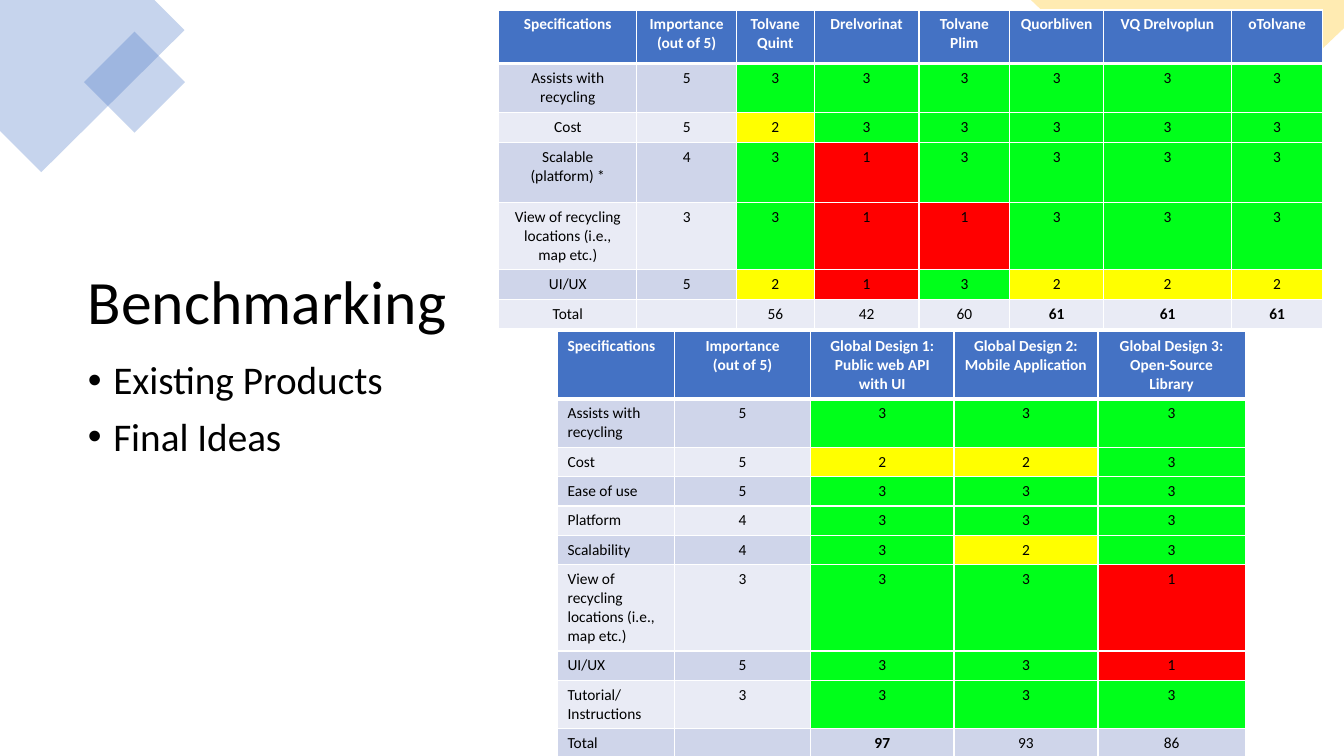
"""Build the benchmarking slide with its two scoring tables."""
from lxml import etree
from pptx import Presentation
from pptx.dml.color import RGBColor
from pptx.enum import shapes, text
from pptx.oxml import ns
from pptx.util import Cm, Pt

COLORS = {
    "blue": "4472C4", "gold": "FFC000", "white": "FFFFFF", "black": "000000",
    "dark band": "CFD5EA", "light band": "E9EBF5",
    "3": "00FF1A", "2": "FFFF00", "1": "FF0000",
}


def add_scores(left, top, widths, heights, rows, label_align):
    """Add a table whose scores are coloured and whose best totals are bold."""
    scores = slide.shapes.add_table(
        len(rows), len(widths), Cm(left), Cm(top), Cm(sum(widths)), Cm(sum(heights))).table
    for column, width in zip(scores.columns, widths):
        column.width = Cm(width)
    for row, height in zip(scores.rows, heights):
        row.height = Cm(height)
    best_total = max(rows[-1][2:], key=int)
    for r, values in enumerate(rows):
        is_header, is_total = r == 0, r == len(rows) - 1
        for c, value in enumerate(values):
            cell = scores.cell(r, c)
            cell.text_frame.text = value
            properties = cell._tc.get_or_add_tcPr()
            for side in ("lnL", "lnR", "lnT", "lnB"):
                thick = (is_header and side == "lnB") or (r == 1 and side == "lnT")
                border = etree.SubElement(properties, ns.qn(f"a:{side}"), w=str(Pt(3 if thick else 1)))
                line_fill = etree.SubElement(border, ns.qn("a:solidFill"))
                etree.SubElement(line_fill, ns.qn("a:srgbClr"), val=COLORS["white"])
            if is_header:
                shade = "blue"
            elif c >= 2 and not is_total:
                shade = value
            else:
                shade = "dark band" if r % 2 else "light band"
            cell.fill.solid()
            cell.fill.fore_color.rgb = RGBColor.from_string(COLORS[shade])
            for paragraph in cell.text_frame.paragraphs:
                paragraph.alignment = label_align if c == 0 else text.PP_ALIGN.CENTER
                if not value:
                    etree.SubElement(paragraph._p, ns.qn("a:endParaRPr"), sz="1100")
                bold = is_header or (is_total and value == best_total)
                format_runs(paragraph, 11, "white" if is_header else "black", bold)


def format_runs(paragraph, size, color, bold=False):
    """Give every run of a paragraph its font."""
    for run in paragraph.runs:
        run.font.name = "Calibri"
        run.font.size = Pt(size)
        run.font.bold = bold
        run.font.color.rgb = RGBColor.from_string(COLORS[color])


prs = Presentation()
prs.slide_width, prs.slide_height = Cm(33.87), Cm(19.05)
slide = prs.slides.add_slide(prs.slide_layouts[1])

heading = slide.shapes.title
heading.left, heading.top, heading.width, heading.height = Cm(1.96), Cm(4.9), Cm(9.83), Cm(3.73)
heading.text_frame.text = "Benchmarking"
topics = slide.placeholders[1]
topics.left, topics.top, topics.width, topics.height = Cm(1.96), Cm(8.97), Cm(9.7), Cm(3.53)
topics.text_frame.text = "Existing Products\nFinal Ideas"
for holder, anchor, size, before in (
        (heading, text.MSO_ANCHOR.BOTTOM, 44, 0), (topics, text.MSO_ANCHOR.TOP, 28, 10)):
    holder.text_frame.vertical_anchor = anchor
    holder.text_frame.auto_size = text.MSO_AUTO_SIZE.NONE
    holder.text_frame.word_wrap = True
    for paragraph in holder.text_frame.paragraphs:
        paragraph.alignment = text.PP_ALIGN.LEFT
        paragraph.line_spacing = 0.9
        paragraph.space_before = Pt(before)
        format_runs(paragraph, size, "black")
for topic in topics.text_frame.paragraphs:
    indents = topic._p.get_or_add_pPr()
    indents.set("marL", str(Cm(0.64)))
    indents.set("indent", str(-Cm(0.64)))
    etree.SubElement(indents, ns.qn("a:buFont"), typeface="Arial")
    etree.SubElement(indents, ns.qn("a:buChar"), char="•")

small_diamond = slide.shapes.add_shape(
    shapes.MSO_SHAPE.RECTANGLE, Cm(2.49), Cm(1.17), Cm(1.8), Cm(1.8))
small_diamond.rotation = 315
corners = [(small_diamond, "blue")]
for color, outline in (
        ("blue", [(3.89, 0), (0, 0), (0, 3.3), (1.04, 4.34), (4.65, 0.76)]),
        ("gold", [(33.87, 0), (25.98, 0), (30.3, 4.11), (33.87, 0.71)])):
    points = [(Cm(x), Cm(y)) for x, y in outline]
    builder = slide.shapes.build_freeform(*points[0])
    builder.add_line_segments(points[1:], close=True)
    corners.append((builder.convert_to_shape(), color))
for corner, color in corners:
    corner.shadow.inherit = False
    corner.line.fill.background()
    corner.fill.solid()
    corner.fill.fore_color.rgb = RGBColor.from_string(COLORS[color])
    tint = corner.element.spPr.find(".//" + ns.qn("a:srgbClr"))
    etree.SubElement(tint, ns.qn("a:alpha"), val="30000")

existing_products = [
    ["Specifications", "Importance (out of 5)", "Tolvane Quint", "Drelvorinat",
     "Tolvane Plim", "Quorbliven", "VQ Drelvoplun", "oTolvane"],
    ["Assists with recycling", "5", "3", "3", "3", "3", "3", "3"],
    ["Cost", "5", "2", "3", "3", "3", "3", "3"],
    ["Scalable (platform) *", "4", "3", "1", "3", "3", "3", "3"],
    ["View of recycling locations (i.e., map etc.)", "3", "3", "1", "1", "3", "3", "3"],
    ["UI/UX", "5", "2", "1", "3", "2", "2", "2"],
    ["Total", "", "56", "42", "60", "61", "61", "61"],
]
add_scores(12.57, 0.25, [3.48, 2.51, 1.96, 2.64, 2.29, 2.36, 3.23, 2.29],
           [1.35, 1.24, 0.76, 1.5, 1.68, 0.76, 0.74], existing_products, text.PP_ALIGN.CENTER)

final_ideas = [
    ["Specifications", "Importance\n(out of 5)", "Global Design 1:\nPublic web API with UI",
     "Global Design 2:\nMobile Application", "Global Design 3:\nOpen-Source Library"],
    ["Assists with recycling", "5", "3", "3", "3"],
    ["Cost", "5", "2", "2", "3"],
    ["Ease of use", "5", "3", "3", "3"],
    ["Platform", "4", "3", "3", "3"],
    ["Scalability", "4", "3", "2", "3"],
    ["View of recycling locations (i.e., map etc.)", "3", "3", "3", "1"],
    ["UI/UX", "5", "3", "3", "1"],
    ["Tutorial/\nInstructions", "3", "3", "3", "3"],
    ["Total", "", "97", "93", "86"],
]
add_scores(14.05, 8.36, [2.95, 3.43, 3.61, 3.63, 3.71],
           [1.68, 1.22] + [0.74] * 4 + [2.15, 0.74, 1.22, 0.74], final_ideas, text.PP_ALIGN.LEFT)

prs.save("out.pptx")
